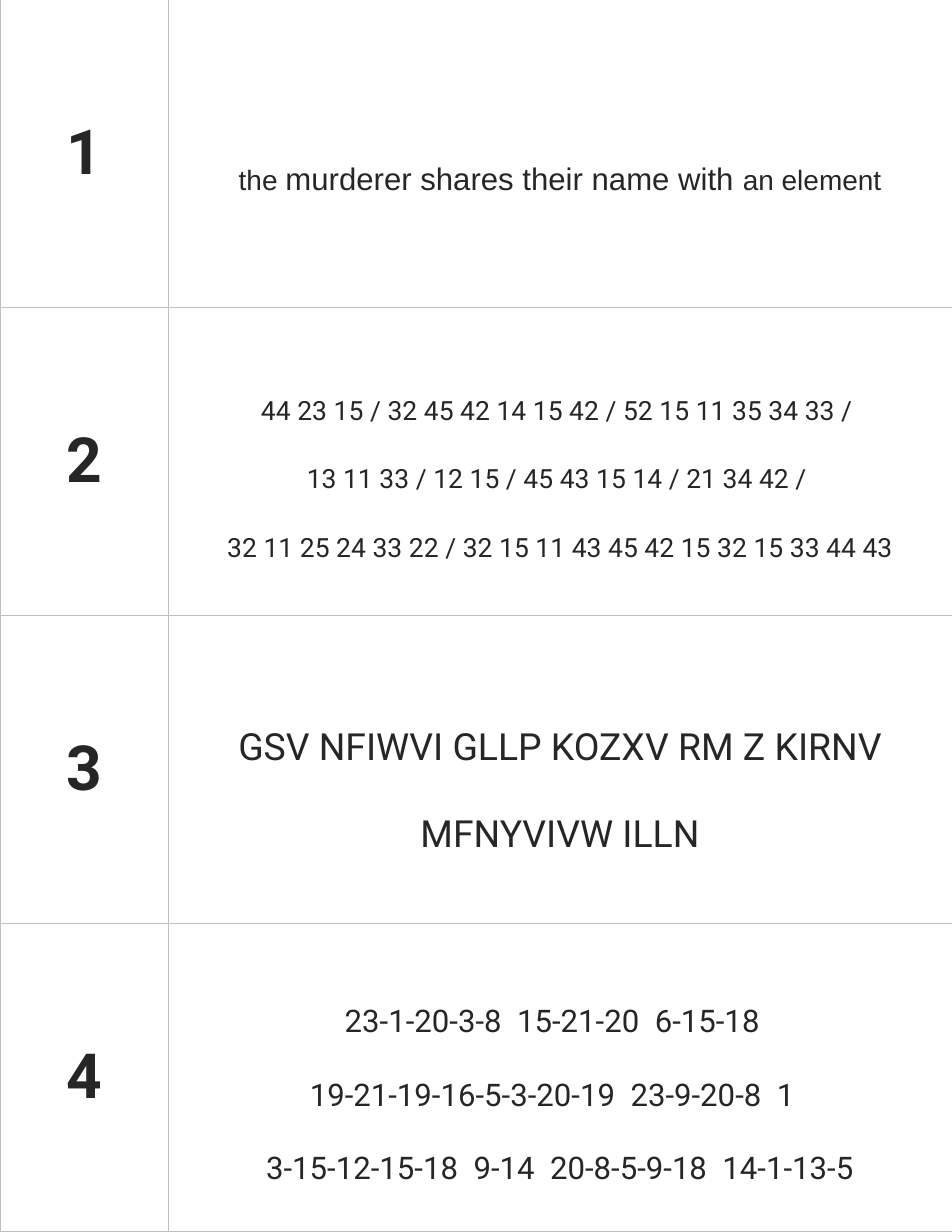
import pptx
import pptx.dml.color
import pptx.enum.text
import pptx.oxml
import pptx.oxml.ns
import pptx.util

Pt = pptx.util.Pt
COLORS = {"text": "262626", "border": "BFBFBF", "fill": "FFFFFF"}

CLUES = [
    {"spacing": 2.5, "font": "Arial", "lines": [
        [("the ", 18), ("murderer shares their name with ", 20), ("an element", 18)],
    ]},
    {"spacing": 2.2, "font": "Roboto", "lines": [
        [("44 23 15 / 32 45 42 14 15 42 / 52 15 11 35 34 33 / ", 17)],
        [("13 11 33 / 12 15 / 45 43 15 14 / 21 34 42 / ", 17)],
        [("32 11 25 24 33 22 / 32 15 11 43 45 42 15 32 15 33 44 43", 17)],
    ]},
    {"spacing": 2.0, "font": "Roboto", "lines": [
        [("GSV NFIWVI GLLP KOZXV RM Z KIRNV MFNYVIVW ILLN", 24)],
    ]},
    {"spacing": 2.0, "font": "Roboto", "lines": [
        [("23-1-20-3-8  15-21-20  6-15-18  ", 20)],
        [("19-21-19-16-5-3-20-19  23-9-20-8  1  ", 20)],
        [("3-15-12-15-18  9-14  20-8-5-9-18  14-1-13-5", 20)],
    ]},
]

WIDTH, HEIGHT = 612, 792
COLUMN_WIDTHS = (108, 504)
BORDER_WIDTH = 0.5


def add_borders(cell):
    properties = cell._tc.get_or_add_tcPr()
    for index, side in enumerate(("lnL", "lnR", "lnT", "lnB")):
        border = pptx.oxml.parse_xml(
            f'<a:{side} {pptx.oxml.ns.nsdecls("a")} w="{int(Pt(BORDER_WIDTH))}">'
            f'<a:solidFill><a:srgbClr val="{COLORS["border"]}"/></a:solidFill></a:{side}>'
        )
        properties.insert(index, border)


def fill_cell(cell, lines, font, spacing=None, bold=False):
    cell.fill.solid()
    cell.fill.fore_color.rgb = pptx.dml.color.RGBColor.from_string(COLORS["fill"])
    cell.vertical_anchor = pptx.enum.text.MSO_ANCHOR.MIDDLE
    cell.margin_left = cell.margin_right = Pt(36)
    cell.margin_top = cell.margin_bottom = Pt(14.4)
    add_borders(cell)
    for index, line in enumerate(lines):
        frame = cell.text_frame
        paragraph = frame.add_paragraph() if index else frame.paragraphs[0]
        paragraph.alignment = pptx.enum.text.PP_ALIGN.CENTER
        if spacing:
            paragraph.line_spacing = spacing
        for text, size in line:
            run = paragraph.add_run()
            run.text = text
            run.font.name = font
            run.font.size = Pt(size)
            run.font.bold = bold
            run.font.color.rgb = pptx.dml.color.RGBColor.from_string(COLORS["text"])


def main():
    presentation = pptx.Presentation()
    presentation.slide_width, presentation.slide_height = Pt(WIDTH), Pt(HEIGHT)
    slide = presentation.slides.add_slide(presentation.slide_layouts[6])
    table = slide.shapes.add_table(
        len(CLUES), len(COLUMN_WIDTHS), Pt(0), Pt(-0.5), Pt(WIDTH), Pt(HEIGHT)
    ).table
    table.first_row = table.horz_banding = False
    for column, width in zip(table.columns, COLUMN_WIDTHS):
        column.width = Pt(width)
    for index, clue in enumerate(CLUES):
        table.rows[index].height = Pt(HEIGHT / len(CLUES))
        fill_cell(table.cell(index, 0), [[(str(index + 1), 40)]], "Roboto", bold=True)
        fill_cell(table.cell(index, 1), clue["lines"], clue["font"], clue["spacing"])
    presentation.save("out.pptx")


if __name__ == "__main__":
    main()
